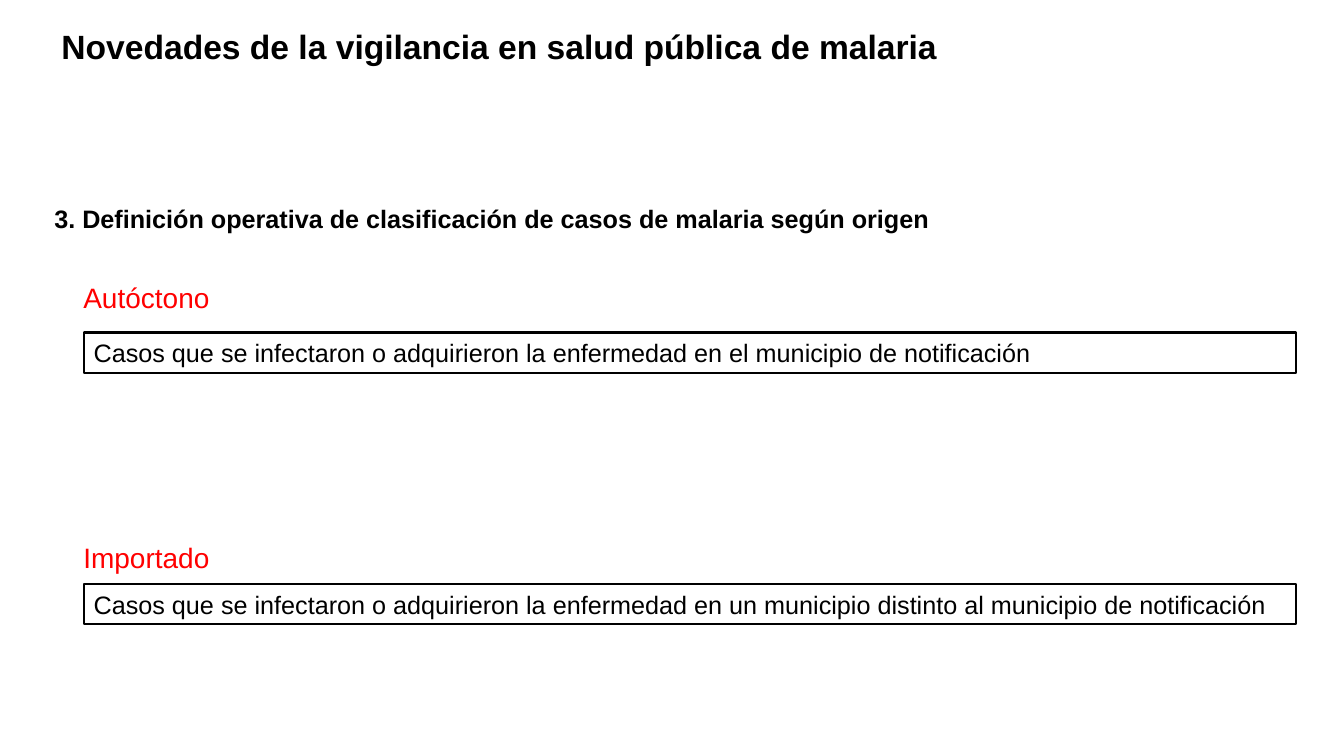
from pptx import Presentation
from pptx.dml.color import RGBColor
from pptx.enum import shapes, text
from pptx.util import Cm, Pt

HEADING = "Novedades de la vigilancia en salud pública de malaria"
SECTION = "3. Definición operativa de clasificación de casos de malaria según origen"
ORIGINS = [
    ("Autóctono", 7.04, 8.38,
     "Casos que se infectaron o adquirieron la enfermedad en el municipio de notificación"),
    ("Importado", 13.59, 14.71,
     "Casos que se infectaron o adquirieron la enfermedad en un municipio distinto al municipio de notificación"),
]
COLORS = {"ink": "000000", "origin": "FF0000"}
FORMATS = {
    "heading": {"size": Pt(24), "bold": True},
    "section": {"size": Pt(18), "bold": True},
    "origin": {"size": Pt(20), "bold": False},
    "definition": {"size": Pt(18), "bold": False},
}


def write(holder, words, role, color="ink", **layout):
    frame = holder.text_frame
    frame.word_wrap = True
    frame.vertical_anchor = layout.pop("anchor", text.MSO_ANCHOR.TOP)
    paragraph = frame.paragraphs[0]
    for name, value in layout.items():
        setattr(paragraph, name, value)
    run = paragraph.add_run()
    run.text = words
    for name, value in {"name": "Arial", **FORMATS[role]}.items():
        setattr(run.font, name, value)
    run.font.color.rgb = RGBColor.from_string(COLORS[color])


def add_label(slide, words, role, place, color="ink"):
    label = slide.shapes.add_textbox(*map(Cm, place))
    write(label, words, role, color, line_spacing=0.9)


def add_definition(slide, words, top):
    definition = slide.shapes.add_shape(
        shapes.MSO_SHAPE.RECTANGLE, *map(Cm, (2.11, top, 30.56, 1.02)))
    definition.shadow.inherit = False
    definition.fill.background()
    definition.line.color.rgb = RGBColor.from_string(COLORS["ink"])
    definition.line.width = Pt(1.5)
    write(definition, words, "definition", anchor=text.MSO_ANCHOR.MIDDLE,
          alignment=text.PP_ALIGN.JUSTIFY)
    definition.text_frame.auto_size = text.MSO_AUTO_SIZE.SHAPE_TO_FIT_TEXT


def main():
    deck = Presentation()
    deck.slide_width, deck.slide_height = Cm(33.87), Cm(19.05)
    slide = deck.slides.add_slide(deck.slide_layouts[6])
    add_label(slide, HEADING, "heading", (1.3, 0.64, 31.37, 1.22))
    add_label(slide, SECTION, "section", (1.12, 5.08, 29.95, 1.12))
    for origin, origin_top, definition_top, definition in ORIGINS:
        add_label(slide, origin, "origin", (1.85, origin_top, 29.21, 1.35), "origin")
        add_definition(slide, definition, definition_top)
    deck.save("out.pptx")


if __name__ == "__main__":
    main()
